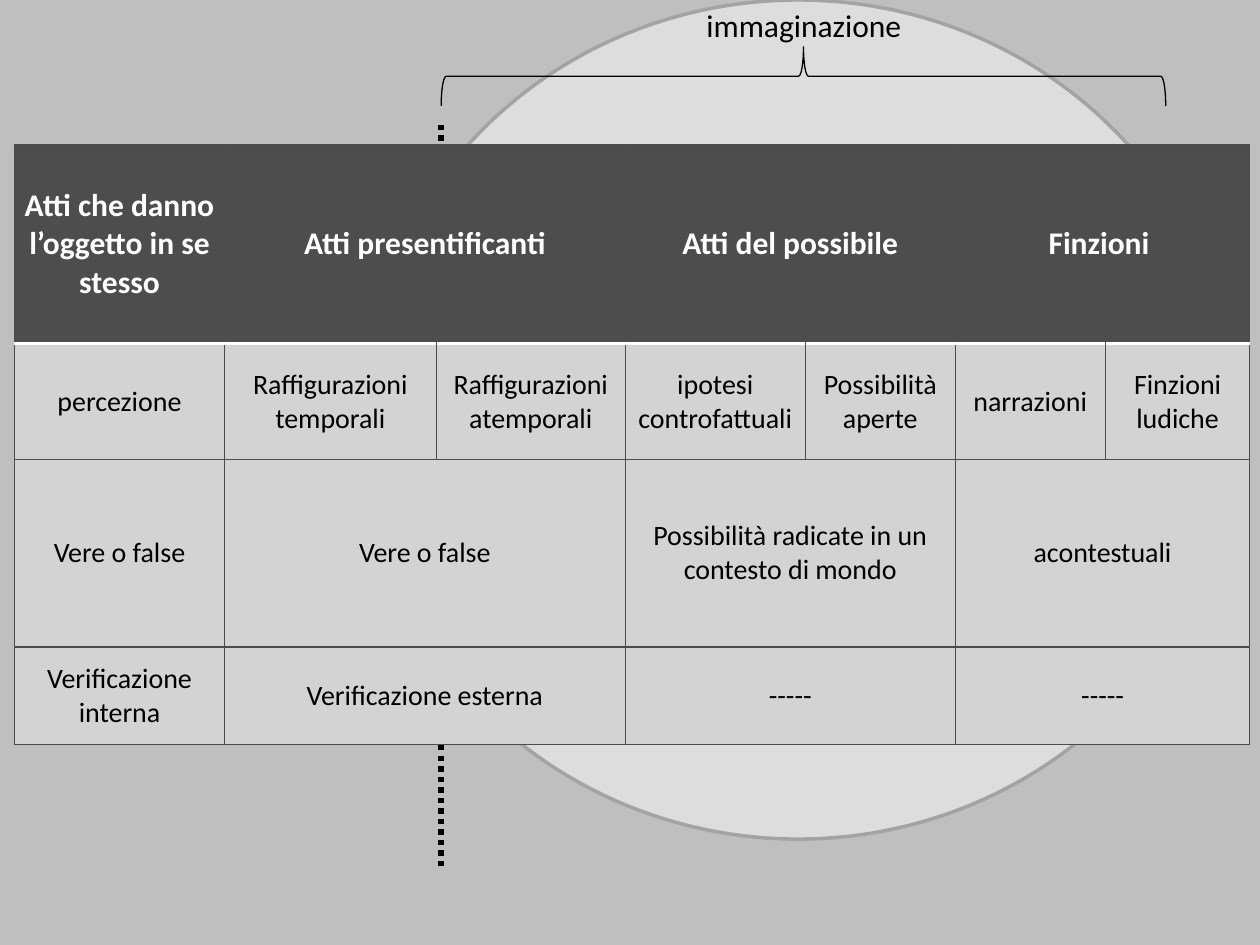
from dataclasses import dataclass

from lxml.etree import SubElement
from pptx import Presentation
from pptx.dml.color import RGBColor
from pptx.enum.dml import MSO_LINE
from pptx.enum.shapes import MSO_CONNECTOR, MSO_SHAPE
from pptx.enum.text import MSO_ANCHOR, PP_ALIGN
from pptx.oxml.ns import qn
from pptx.util import Pt


@dataclass(frozen=True)
class Theme:
    background: str = "BFBFBF"
    circle: str = "DDDDDD"
    circle_edge: str = "A3A3A3"
    header: str = "4D4D4D"
    body: str = "D3D3D3"
    grid: str = "4B4B4B"
    ink: str = "000000"
    white: str = "FFFFFF"
    font: str = "Calibri"
    large: int = 18
    small: int = 16


theme = Theme()


def write_centred(frame, text, size, color, bold=False):
    paragraph = frame.paragraphs[0]
    paragraph.alignment = PP_ALIGN.CENTER
    run = paragraph.add_run()
    run.text = text
    run.font.name = theme.font
    run.font.size = Pt(size)
    run.font.bold = bold
    run.font.color.rgb = RGBColor.from_string(color)


def add_border(cell, side, color, width):
    line = SubElement(cell._tc.get_or_add_tcPr(), qn(f"a:ln{side}"), w=str(Pt(width)))
    fill = SubElement(line, qn("a:solidFill"))
    SubElement(fill, qn("a:srgbClr"), val=color)


prs = Presentation()
prs.slide_width, prs.slide_height = Pt(720), Pt(540)
slide = prs.slides.add_slide(prs.slide_layouts[6])
slide.background.fill.solid()
slide.background.fill.fore_color.rgb = RGBColor.from_string(theme.background)

# Circle of the imagination
circle = slide.shapes.add_shape(MSO_SHAPE.OVAL, Pt(206.6), Pt(0), Pt(499), Pt(479.5))
circle.shadow.inherit = False
circle.fill.solid()
circle.fill.fore_color.rgb = RGBColor.from_string(theme.circle)
circle.line.color.rgb = RGBColor.from_string(theme.circle_edge)
circle.line.width = Pt(2)

# Dotted divide, behind the table
divide = slide.shapes.add_connector(
    MSO_CONNECTOR.STRAIGHT, Pt(252), Pt(71.3), Pt(252), Pt(496.8))
divide.line.color.rgb = RGBColor.from_string(theme.ink)
divide.line.width = Pt(3)
divide.line.dash_style = MSO_LINE.ROUND_DOT
SubElement(divide._element.spPr, qn("a:effectLst"))

# Table of acts: (text, columns spanned)
rows = [
    [("Atti che danno l’oggetto in se stesso", 1), ("Atti presentificanti", 2),
     ("Atti del possibile", 2), ("Finzioni ", 2)],
    [("percezione", 1), ("Raffigurazioni temporali", 1),
     ("Raffigurazioni atemporali", 1), ("ipotesi controfattuali", 1),
     ("Possibilità aperte", 1), ("narrazioni", 1), ("Finzioni ludiche", 1)],
    [("Vere o false", 1), ("Vere o false", 2),
     ("Possibilità radicate in un contesto di mondo", 2), ("acontestuali", 2)],
    [("Verificazione interna", 1), ("Verificazione esterna", 2),
     ("-----", 2), ("-----", 2)],
]
column_widths = [120, 121, 108, 102.9, 85.7, 85.7, 82.7]
row_heights = [113.8, 66.2, 107.2, 55.5]
acts = slide.shapes.add_table(
    len(rows), len(column_widths), Pt(8.3), Pt(82.6),
    Pt(sum(column_widths)), Pt(sum(row_heights))).table
for column, width in zip(acts.columns, column_widths):
    column.width = Pt(width)
for row, height in zip(acts.rows, row_heights):
    row.height = Pt(height)

for r, entries in enumerate(rows):
    is_header = r == 0
    for cell in acts.rows[r].cells:
        for side in "LRTB":
            under_header = (r, side) in [(0, "B"), (1, "T")]
            add_border(cell, side, theme.white if under_header else theme.grid,
                       2 if under_header else 0.75)
        cell.fill.solid()
        cell.fill.fore_color.rgb = RGBColor.from_string(
            theme.header if is_header else theme.body)
        cell.vertical_anchor = MSO_ANCHOR.MIDDLE
        cell.margin_left = cell.margin_right = Pt(5.4)
        cell.margin_top = cell.margin_bottom = Pt(3.6)
    c = 0
    for text, span in entries:
        act = acts.cell(r, c)
        if span > 1:
            act.merge(acts.cell(r, c + span - 1))
        write_centred(act.text_frame, text,
                      theme.large if is_header else theme.small,
                      theme.white if is_header else theme.ink, is_header)
        c += span

# Brace over the imaginative acts, with its label
brace = slide.shapes.add_shape(
    MSO_SHAPE.LEFT_BRACE, Pt(442.2), Pt(-163.4), Pt(33.8), Pt(414))
brace.rotation = 90
brace.shadow.inherit = False
brace.fill.background()
brace.line.color.rgb = RGBColor.from_string(theme.ink)
brace.line.width = Pt(0.75)

label = slide.shapes.add_textbox(Pt(286.6), Pt(0), Pt(345.6), Pt(29))
label.text_frame.word_wrap = True
write_centred(label.text_frame, "immaginazione", theme.large, theme.ink)

prs.save("out.pptx")
